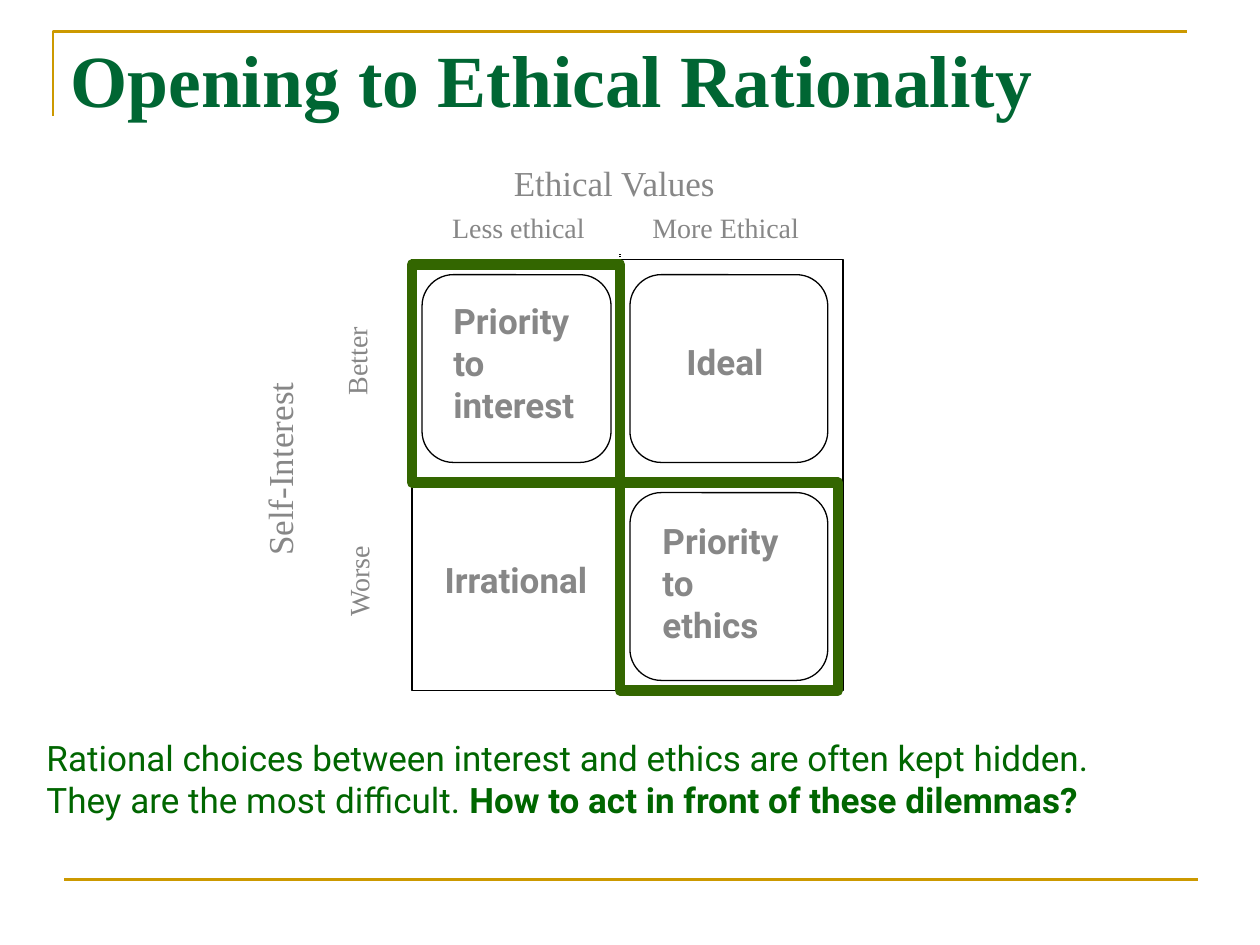
from pptx import Presentation
from pptx.util import Inches, Pt
from pptx.dml.color import RGBColor
from pptx.enum.dml import MSO_LINE
from pptx.enum.shapes import MSO_CONNECTOR, MSO_SHAPE
from pptx.enum.text import MSO_ANCHOR, PP_ALIGN
from lxml import etree

COLORS = {"gold": "CC9900", "title": "006633", "gray": "878787",
          "black": "000000", "body": "006600", "frame": "336600"}
SERIF, SANS = "Times New Roman", "Roboto"
A = "http://schemas.openxmlformats.org/drawingml/2006/main"


def add_text(tf, text, font=SERIF, size=20, color="gray", bold=False, wrap=False, new=False):
    """Write text into a frame, one paragraph per line; new=False continues the last one."""
    tf.word_wrap = wrap
    tf.vertical_anchor = MSO_ANCHOR.TOP
    for i, line in enumerate(text.split("\n")):
        p = tf.add_paragraph() if i or new else tf.paragraphs[-1]
        p.alignment = PP_ALIGN.LEFT
        r = p.add_run()
        r.text = line
        r.font.name, r.font.size, r.font.bold = font, Pt(size), bold
        r.font.color.rgb = RGBColor.from_string(COLORS[color])


def outline(sp, color, width):
    """Give a shape or connector a plain line with no shadow."""
    sp.line.color.rgb = RGBColor.from_string(COLORS[color])
    sp.line.width = Pt(width)
    if hasattr(sp, "shadow"):
        sp.shadow.inherit = False
    else:
        etree.SubElement(sp._element.spPr, f"{{{A}}}effectLst")
    if hasattr(sp, "fill"):
        sp.fill.background()


prs = Presentation()
prs.slide_width, prs.slide_height = Inches(10), Inches(7.5)
s = prs.slides.add_slide(prs.slide_layouts[5])

# Gold rules around the page
fb = s.shapes.build_freeform(Inches(0.42), Inches(0.92))
fb.add_line_segments([(Inches(0.42), Inches(0.25)), (Inches(9.42), Inches(0.25))], close=False)
outline(fb.convert_to_shape(), "gold", 1.5)
rule = s.shapes.add_connector(MSO_CONNECTOR.STRAIGHT, Inches(0.51), Inches(6.98),
                              Inches(9.51), Inches(6.98))
outline(rule, "gold", 1.5)

# Title
title = s.shapes.title
title.left, title.top, title.width, title.height = map(Inches, (0.46, 0.22, 9.5, 1.25))
add_text(title.text_frame, "Opening to Ethical Rationality", size=42, color="title",
         bold=True, wrap=True)

# Matrix border and dotted dividers
border = s.shapes.add_shape(MSO_SHAPE.RECTANGLE, Inches(3.27), Inches(2.06),
                            Inches(3.42), Inches(3.42))
outline(border, "black", 0.75)
for x1, y1, x2, y2 in [(4.92, 5.42, 4.92, 2.02), (3.27, 3.81, 6.65, 3.81)]:
    divider = s.shapes.add_connector(MSO_CONNECTOR.STRAIGHT, Inches(x1), Inches(y1),
                                     Inches(x2), Inches(y2))
    outline(divider, "black", 0.75)
    divider.line.dash_style = MSO_LINE.ROUND_DOT

# Rounded cells
for x, y, w in [(3.35, 2.18, 1.5), (5, 2.18, 1.57), (5, 3.91, 1.57)]:
    cell = s.shapes.add_shape(MSO_SHAPE.ROUNDED_RECTANGLE, Inches(x), Inches(y),
                              Inches(w), Inches(1.49))
    outline(cell, "black", 0.75)

# Axis labels and cell texts
axis, cell_text = {"size": 16}, {"font": SANS, "bold": True}
for text, x, y, w, h, rotation, style in [
    ("Ethical Values", 3.98, 1.23, 1.83, 0.42, 0, {}),
    ("Less ethical", 3.49, 1.62, 1.26, 0.36, 0, axis),
    ("More Ethical", 5.08, 1.62, 1.37, 0.36, 0, axis),
    ("Self-Interest", 1.43, 3.5, 1.58, 0.44, 270, {}),
    ("Better", 2.45, 2.68, 0.75, 0.36, 270, axis),
    ("Worse", 2.45, 4.42, 0.78, 0.36, 270, axis),
    ("Priority\nto\ninterest", 3.5, 2.33, 1.2, 1.1, 0, cell_text),
    ("Ideal", 5.35, 2.65, 0.83, 0.43, 0, cell_text),
    ("Irrational", 3.43, 4.38, 1.39, 0.43, 0, cell_text),
    ("Priority\nto\nethics", 5.16, 4.07, 1.17, 1.1, 0, cell_text),
]:
    label = s.shapes.add_textbox(Inches(x), Inches(y), Inches(w), Inches(h))
    label.rotation = rotation
    add_text(label.text_frame, text, **style)

# Conclusion
tf = s.shapes.add_textbox(Inches(0.27), Inches(5.8), Inches(9.29), Inches(0.77)).text_frame
body = {"font": SANS, "color": "body", "wrap": True}
add_text(tf, "Rational choices between interest and ethics are often kept hidden.", **body)
tf.paragraphs[0].add_line_break()
add_text(tf, "They are the most difficult. ", **body)
add_text(tf, "How to act in front of these dilemmas?", bold=True, **body)

# Green frames on the two dilemma cells
for x, y, w, h in [(3.27, 2.1, 1.65, 1.73), (4.92, 3.83, 1.73, 1.65)]:
    frame = s.shapes.add_shape(MSO_SHAPE.RECTANGLE, Inches(x), Inches(y), Inches(w), Inches(h))
    outline(frame, "frame", 6)

prs.save("out.pptx")
